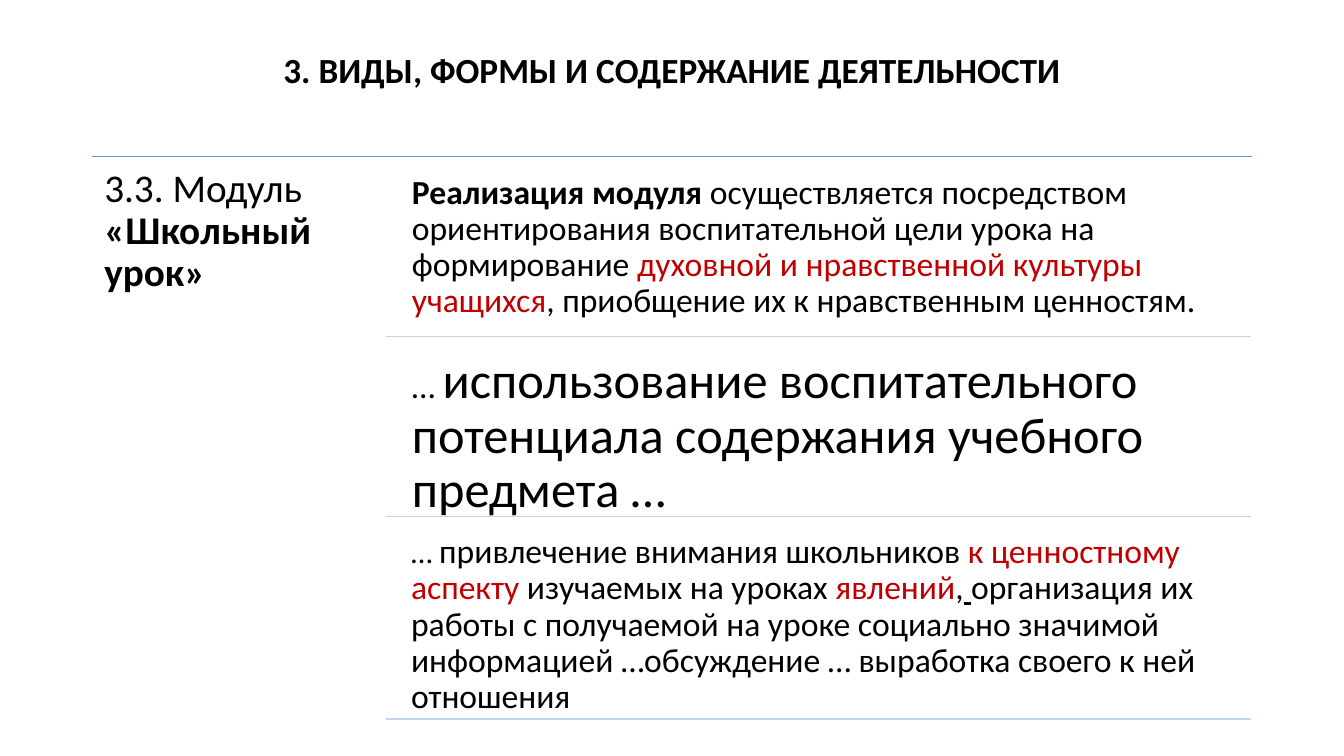
from dataclasses import dataclass

from lxml import etree
from pptx import Presentation
from pptx.dml.color import RGBColor
from pptx.enum.shapes import MSO_CONNECTOR
from pptx.enum.text import MSO_ANCHOR, MSO_AUTO_SIZE, PP_ALIGN
from pptx.oxml.ns import qn
from pptx.util import Cm, Pt

STRAIGHT = MSO_CONNECTOR.STRAIGHT
TOP, MIDDLE = MSO_ANCHOR.TOP, MSO_ANCHOR.MIDDLE
LEFT, CENTER = PP_ALIGN.LEFT, PP_ALIGN.CENTER
NO_FIT = MSO_AUTO_SIZE.NONE


@dataclass(frozen=True)
class Theme:
    font: str = "Calibri"
    text: str = "000000"
    accent: str = "C00000"
    top_rule: str = "5B9BD5"
    row_rule: str = "C4D5EB"
    title: float = 25.2
    module: float = 28
    body: float = 24
    large: float = 36
    small: float = 22
    rule: float = 1
    spacing: float = 0.9


T = Theme()

# Content: runs are (text, format that differs from the default)
ACCENT = {"color": T.accent}
TITLE = [("3. ВИДЫ, ФОРМЫ И СОДЕРЖАНИЕ ДЕЯТЕЛЬНОСТИ", {"bold": True})]
MODULE = [("3.3. Модуль ", {}), ("«Школьный урок»", {"bold": True})]
ROWS = [  # height, inset, runs
    (4.32, 0.25, [
        ("Реализация модуля", {"bold": True}),
        (" осуществляется посредством ориентирования воспитательной цели урока на формирование ", {}),
        ("духовной и нравственной культуры учащихся", ACCENT),
        (", приобщение их к нравственным ценностям.", {}),
    ]),
    (4.32, 0.25, [
        ("… ", {}),
        ("использование воспитательного потенциала содержания учебного предмета …", {"size": T.large}),
    ]),
    (4.88, 0.23, [
        ("… ", {"size": T.small}),
        ("привлечение внимания школьников ", {}),
        ("к ценностному аспекту", ACCENT),
        (" изучаемых на уроках ", {}),
        ("явлений", ACCENT),
        (",", {}),
        (" ", {"italic": True, "underline": True}),
        ("организация их работы с получаемой на уроке социально значимой информацией "
         "…обсуждение … выработка своего к ней отношения", {}),
    ]),
]

# Layout in centimetres
SLIDE_W, SLIDE_H = 33.87, 19.05
MARGIN, CONTENT_W = 2.33, 29.21
TITLE_TOP, TITLE_H = 1.01, 2.34
RULE_Y = 3.94
MODULE_W, MODULE_H = 7.39, 14.38
ROW_X, ROW_W = 10.13, 21.39
ROW_RULE_X = 9.73
GAP = 0.22


def write(sp, runs, size=T.body, align=LEFT, anchor=TOP, inset=0.25, bottom=None):
    """Fill a shape with one paragraph of formatted runs."""
    tf = sp.text_frame
    tf.word_wrap, tf.auto_size, tf.vertical_anchor = True, NO_FIT, anchor
    tf.margin_left = tf.margin_right = tf.margin_top = Cm(inset)
    tf.margin_bottom = Cm(inset if bottom is None else bottom)
    p = tf.paragraphs[0]
    p.alignment, p.line_spacing = align, T.spacing
    for text, style in runs:
        r = p.add_run()
        r.text = text
        r.font.name = T.font
        r.font.size = Pt(style.get("size", size))
        r.font.color.rgb = RGBColor.from_string(style.get("color", T.text))
        r.font.bold = style.get("bold", False)
        r.font.italic = style.get("italic", False)
        r.font.underline = style.get("underline", False)


def add_text(s, x, y, w, h, runs, **fmt):
    write(s.shapes.add_textbox(Cm(x), Cm(y), Cm(w), Cm(h)), runs, **fmt)


def add_rule(s, x1, x2, y, color):
    line = s.shapes.add_connector(STRAIGHT, Cm(x1), Cm(y), Cm(x2), Cm(y))
    line.line.color.rgb = RGBColor.from_string(color)
    line.line.width = Pt(T.rule)
    etree.SubElement(line._element.spPr, qn("a:effectLst"))


def main():
    prs = Presentation()
    prs.slide_width, prs.slide_height = Cm(SLIDE_W), Cm(SLIDE_H)
    s = prs.slides.add_slide(prs.slide_layouts[5])

    # Title, raised above the middle of its box by the bottom inset
    title = s.shapes.title
    title.left, title.top = Cm(MARGIN), Cm(TITLE_TOP)
    title.width, title.height = Cm(CONTENT_W), Cm(TITLE_H)
    write(title, TITLE, size=T.title, align=CENTER, anchor=MIDDLE, inset=0.13, bottom=0.84)

    # Module name under the top rule
    add_rule(s, MARGIN, MARGIN + CONTENT_W, RULE_Y, T.top_rule)
    add_text(s, MARGIN, RULE_Y, MODULE_W, MODULE_H, MODULE, size=T.module, inset=0.3)

    # Rows, each closed by a rule
    y = RULE_Y
    for height, inset, runs in ROWS:
        add_text(s, ROW_X, y + GAP, ROW_W, height, runs, inset=inset)
        y += GAP + height
        add_rule(s, ROW_RULE_X, ROW_X + ROW_W, y, T.row_rule)

    prs.save("out.pptx")


if __name__ == "__main__":
    main()
